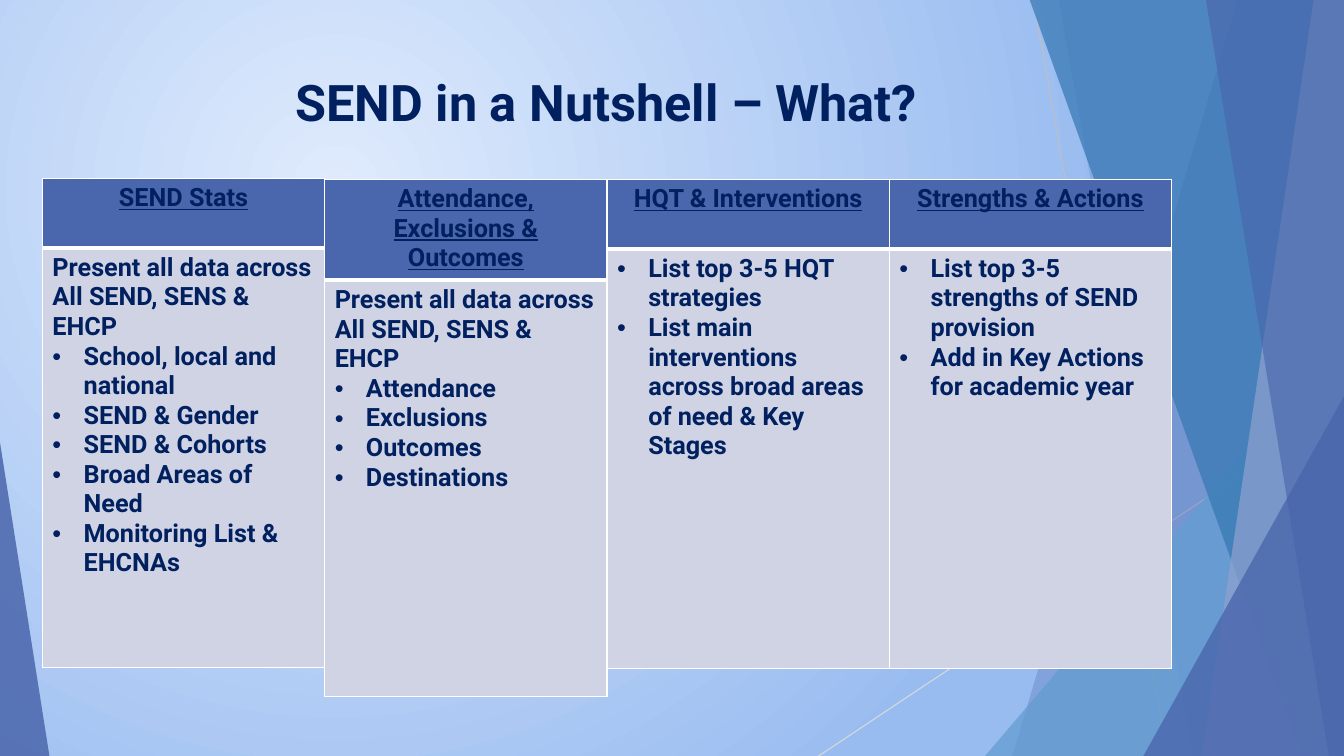
from pptx import Presentation
from pptx.dml.color import RGBColor
from pptx.enum.shapes import MSO_CONNECTOR, MSO_SHAPE
from pptx.enum.text import MSO_ANCHOR, PP_ALIGN
from pptx.oxml.ns import qn
from pptx.util import Inches, Pt
from lxml.etree import SubElement

COLORS = {"navy": "002060", "blue": "4A66AC", "sky": "629DD1", "teal": "3477B2",
          "mist": "90A2CF", "panel": "D0D3E3", "white": "FFFFFF",
          "gray": "BFBFBF", "silver": "D9D9D9", "glow": "DFEBFD", "edge": "99BCF0"}
FONT = "Roboto"
WIDTH, HEIGHT = 13.33, 7.5

TITLE = "SEND in a Nutshell – What?"
INTRO = "Present all data across All SEND, SENS & EHCP"
PANELS = [
    {"heading": "SEND Stats", "top": 1.77, "rows": (0.69, 4.16), "intro": [INTRO],
     "bullets": ["School, local and national", "SEND & Gender", "SEND & Cohorts",
                 "Broad Areas of Need", "Monitoring List & EHCNAs"]},
    {"heading": "Attendance, Exclusions & Outcomes", "top": 1.78, "rows": (0.97, 4.13),
     "intro": [INTRO],
     "bullets": ["Attendance", "Exclusions", "Outcomes", "Destinations"]},
    {"heading": "HQT & Interventions", "top": 1.78, "rows": (0.69, 4.16), "intro": [],
     "bullets": ["List top 3-5 HQT strategies",
                 "List main interventions across broad areas of need & Key Stages"]},
    {"heading": "Strengths & Actions", "top": 1.78, "rows": (0.69, 4.16), "intro": [],
     "bullets": ["List top 3-5 strengths of SEND provision",
                 "Add in Key Actions for academic year"]},
]
PANEL_LEFT, PANEL_WIDTH = 0.42, 2.8

RAYS = [((10.25, 0), (11.58, HEIGHT), "gray"), ((WIDTH, 4.03), (8.12, HEIGHT), "silver")]
BANDS_BEHIND = [(12.28, 10.04, "blue", 30), (10.5, 11.83, "blue", 20)]
BANDS_FRONT = [(10.21, 12.91, "teal", 70), (13.03, 11.92, "mist", 70),
               (11.96, 13.18, "blue", 65)]
TRIANGLE_BEHIND = (9.77, 3.33, 3.56, 1, "sky", 72)
TRIANGLES_FRONT = [(11.34, 3.93, 1.99, 1, "blue", 80), (0, 4.39, 0.49, 0, "blue", 85)]


def rgb(name):
    return RGBColor.from_string(COLORS[name])


def paint(shape, color, opacity):
    shape.shadow.inherit = False
    shape.fill.solid()
    shape.fill.fore_color.rgb = rgb(color)
    shape.line.fill.background()
    tint = shape.element.spPr.find(qn("a:solidFill"))[0]
    SubElement(tint, qn("a:alpha"), val=str(opacity * 1000))


def add_ray(slide, start, end, color):
    ray = slide.shapes.add_connector(MSO_CONNECTOR.STRAIGHT, *map(Inches, start + end))
    ray.line.color.rgb = rgb(color)
    ray.line.width = Pt(0.75)
    SubElement(ray.element.spPr, qn("a:effectLst"))


def add_band(slide, top_x, bottom_x, color, opacity):
    outline = slide.shapes.build_freeform(Inches(top_x), Inches(-0.01))
    corners = [(WIDTH, -0.01), (WIDTH, HEIGHT), (bottom_x, HEIGHT)]
    outline.add_line_segments([(Inches(x), Inches(y)) for x, y in corners], close=True)
    paint(outline.convert_to_shape(), color, opacity)


def add_triangle(slide, left, top, width, apex, color, opacity):
    triangle = slide.shapes.add_shape(MSO_SHAPE.ISOSCELES_TRIANGLE, Inches(left), Inches(top),
                                      Inches(width), Inches(HEIGHT - top))
    triangle.adjustments[0] = apex
    paint(triangle, color, opacity)


def write(paragraph, text, size=18, align=PP_ALIGN.LEFT, underline=False, bullet=False):
    paragraph.alignment = align
    run = paragraph.add_run()
    run.text = text
    run.font.name = FONT
    run.font.size = Pt(size)
    run.font.bold = True
    run.font.underline = underline
    run.font.color.rgb = rgb("navy")
    if bullet:
        properties = paragraph._p.get_or_add_pPr()
        properties.set("marL", str(Inches(0.31)))
        properties.set("indent", str(Inches(-0.31)))
        SubElement(properties, qn("a:buFont"), typeface="Arial")
        SubElement(properties, qn("a:buChar"), char="•")


def style_cell(cell, color, top, bottom):
    properties = cell._tc.get_or_add_tcPr()
    for side, width in (("L", 1), ("R", 1), ("T", top), ("B", bottom)):
        border = SubElement(properties, qn(f"a:ln{side}"), w=str(Pt(width)))
        SubElement(SubElement(border, qn("a:solidFill")), qn("a:srgbClr"), val=COLORS["white"])
    cell.fill.solid()
    cell.fill.fore_color.rgb = rgb(color)


def add_panel(slide, left, panel):
    frame = slide.shapes.add_table(2, 1, Inches(left), Inches(panel["top"]),
                                   Inches(PANEL_WIDTH), Inches(sum(panel["rows"])))
    table = frame.table
    table.first_row = table.horz_banding = False
    for row, height in zip(table.rows, panel["rows"]):
        row.height = Inches(height)
    heading, body = table.cell(0, 0), table.cell(1, 0)
    style_cell(heading, "blue", 1, 3)
    style_cell(body, "panel", 3, 1)
    write(heading.text_frame.paragraphs[0], panel["heading"],
          align=PP_ALIGN.CENTER, underline=True)
    lines = [(text, False) for text in panel["intro"]]
    lines += [(text, True) for text in panel["bullets"]]
    for index, (text, bullet) in enumerate(lines):
        text_frame = body.text_frame
        paragraph = text_frame.add_paragraph() if index else text_frame.paragraphs[0]
        write(paragraph, text, bullet=bullet)


def set_background(slide):
    fill = slide.background.fill
    fill.gradient()
    for stop, color in zip(fill.gradient_stops, ("glow", "edge")):
        stop.color.rgb = rgb(color)
    gradient = slide.element.find(".//" + qn("a:gradFill"))
    gradient.remove(gradient.find(qn("a:lin")))
    circle = SubElement(gradient, qn("a:path"), path="circle")
    SubElement(circle, qn("a:fillToRect"), l="50000", t="50000", r="100000", b="100000")


def main():
    presentation = Presentation()
    presentation.slide_width, presentation.slide_height = Inches(WIDTH), Inches(HEIGHT)
    slide = presentation.slides.add_slide(presentation.slide_layouts[6])
    set_background(slide)
    for ray in RAYS:
        add_ray(slide, *ray)
    for band in BANDS_BEHIND:
        add_band(slide, *band)
    add_triangle(slide, *TRIANGLE_BEHIND)
    for band in BANDS_FRONT:
        add_band(slide, *band)
    for triangle in TRIANGLES_FRONT:
        add_triangle(slide, *triangle)

    title = slide.shapes.add_textbox(Inches(2.63), Inches(0.6), Inches(6.77), Inches(0.82))
    title.text_frame.word_wrap = True
    title.text_frame.vertical_anchor = MSO_ANCHOR.MIDDLE
    write(title.text_frame.paragraphs[0], TITLE, size=36, align=PP_ALIGN.CENTER)
    for index, panel in enumerate(PANELS):
        add_panel(slide, PANEL_LEFT + index * PANEL_WIDTH, panel)
    presentation.save("out.pptx")


if __name__ == "__main__":
    main()
